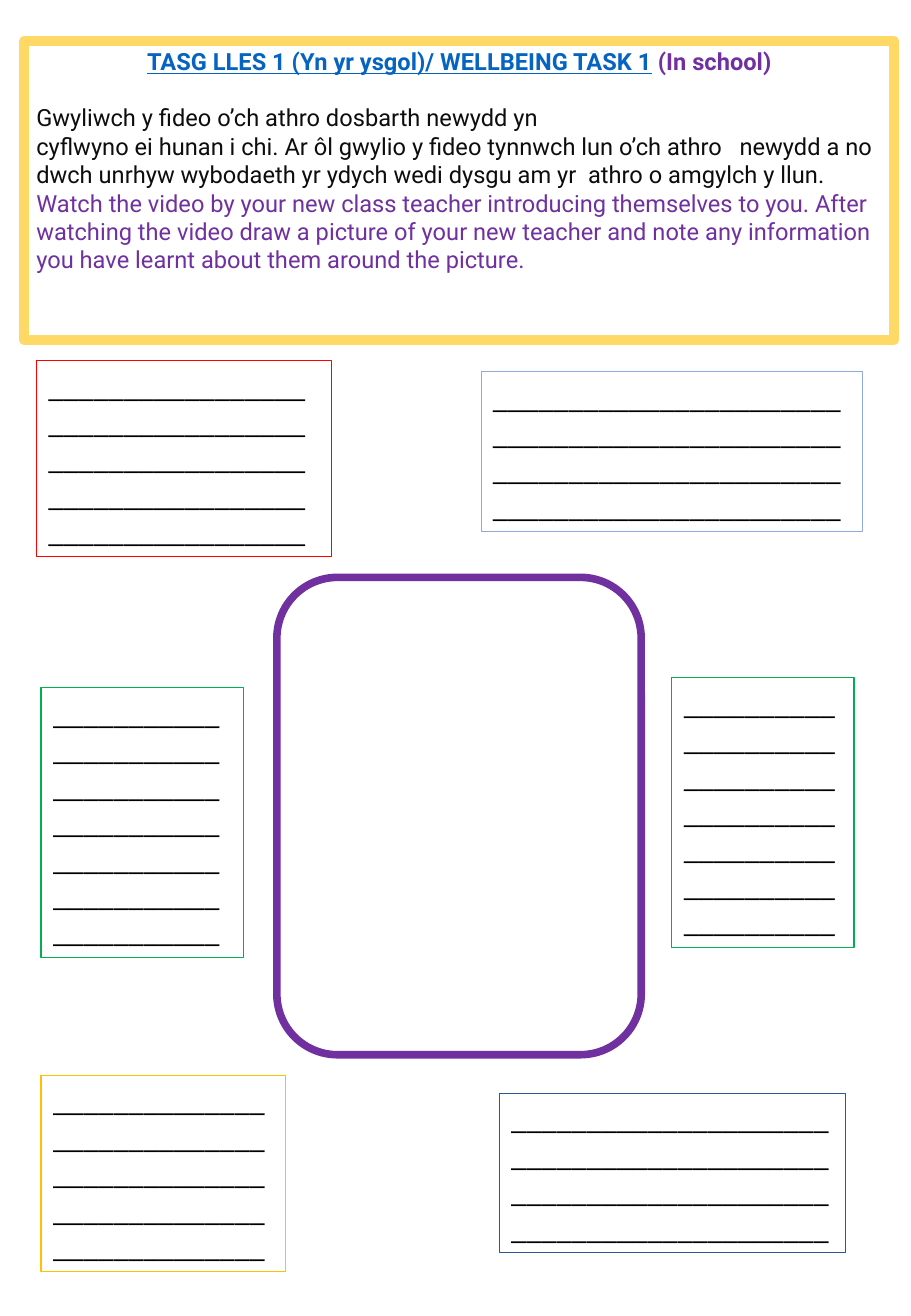
"""Build a bilingual wellbeing task sheet with a drawing frame and note boxes."""
from pptx import Presentation
from pptx.dml.color import RGBColor
from pptx.enum.shapes import MSO_SHAPE
from pptx.enum.text import MSO_ANCHOR, MSO_AUTO_SIZE, PP_ALIGN
from pptx.util import Cm, Pt

BLUE = RGBColor(0x05, 0x63, 0xC1)
PURPLE = RGBColor(0x70, 0x30, 0xA0)
INK = RGBColor(0x0D, 0x0D, 0x0D)
BLACK = RGBColor(0x00, 0x00, 0x00)
SAND = RGBColor(0xFF, 0xD9, 0x66)
SKY = RGBColor(0x8F, 0xAA, 0xDC)
AMBER = RGBColor(0xFF, 0xC0, 0x00)
NAVY = RGBColor(0x2F, 0x55, 0x97)
RED = RGBColor(0xFF, 0x00, 0x00)
GREEN = RGBColor(0x00, 0xB0, 0x50)

HEADING = "TASG LLES 1 (Yn yr ysgol)/ WELLBEING TASK 1"
PLACE = " (In school)"
INSTRUCTIONS = [
    ("Gwyliwch y fideo o’ch athro dosbarth newydd yn", INK),
    ("cyflwyno ei hunan i chi. Ar ôl gwylio y fideo tynnwch lun o’ch athro   newydd a "
     "nodwch unrhyw wybodaeth yr ydych wedi dysgu am yr  athro o amgylch y llun.", INK),
    ("Watch the video by your new class teacher introducing themselves to you. After "
     "watching the video draw a picture of your new teacher and note any information "
     "you have learnt about them around the picture.", PURPLE),
]
TASK_FRAME = (0.51, 0.86, 18.19, 6.25)
PORTRAIT_FRAME = (5.79, 12.07, 7.62, 9.98)
HEADING_HEIGHT = 1.3
NOTE_BOXES = [
    # left, top, width, rows, characters per row, line colour, line width
    (10.06, 7.77, 7.98, 4, 23, SKY, 0.25),
    (0.86, 22.48, 5.11, 5, 14, AMBER, 0.75),
    (10.44, 22.86, 7.24, 4, 21, NAVY, 0.75),
    (0.76, 7.54, 6.17, 5, 17, RED, 0.75),
    (0.86, 14.38, 4.24, 7, 11, GREEN, 0.75),
    (14.05, 14.17, 3.81, 7, 10, GREEN, 0.75),
]
ROW_HEIGHT = 0.77
BOX_PADDING = 0.25
NO_BREAK_SPACE = chr(160)


def add_text(paragraph, text, color, size=14, font="Roboto", bold=False, underline=False,
             align=PP_ALIGN.LEFT):
    """Append a formatted run to a paragraph."""
    paragraph.alignment = align
    run = paragraph.add_run()
    run.text = text
    run.font.name = font
    run.font.size = Pt(size)
    run.font.bold = bold
    run.font.underline = underline
    run.font.color.rgb = color


def add_frame(slide, kind, bounds, color, width):
    """Add an unfilled outline whose text starts at the top."""
    shape = slide.shapes.add_shape(kind, *map(Cm, bounds))
    shape.shadow.inherit = False
    shape.fill.background()
    shape.line.color.rgb = color
    shape.line.width = Pt(width)
    shape.text_frame.word_wrap = True
    shape.text_frame.vertical_anchor = MSO_ANCHOR.TOP
    return shape


def add_heading(slide):
    """Place the title at the top of the task frame."""
    title = slide.shapes.title
    left, top, width, _ = TASK_FRAME
    title.left, title.top = Cm(left), Cm(top)
    title.width, title.height = Cm(width), Cm(HEADING_HEIGHT)
    title.text_frame.auto_size = MSO_AUTO_SIZE.NONE
    title.text_frame.vertical_anchor = MSO_ANCHOR.TOP
    paragraph = title.text_frame.paragraphs[0]
    add_text(paragraph, HEADING, BLUE, bold=True, underline=True, align=PP_ALIGN.CENTER)
    add_text(paragraph, PLACE, PURPLE, bold=True, align=PP_ALIGN.CENTER)


def add_instructions(slide):
    """Add the task frame with its instructions below the heading."""
    frame = add_frame(slide, MSO_SHAPE.RECTANGLE, TASK_FRAME, SAND, 6)
    text_frame = frame.text_frame
    text_frame.margin_top = Cm(HEADING_HEIGHT)
    for index, (text, color) in enumerate(INSTRUCTIONS):
        paragraph = text_frame.add_paragraph() if index else text_frame.paragraphs[0]
        if color == INK:
            text = text.replace(" ", NO_BREAK_SPACE)
        add_text(paragraph, text, color)


def add_note_boxes(slide):
    """Add the ruled boxes for notes around the drawing."""
    for left, top, width, rows, characters, color, line_width in NOTE_BOXES:
        bounds = (left, top, width, rows * ROW_HEIGHT + BOX_PADDING)
        box = add_frame(slide, MSO_SHAPE.RECTANGLE, bounds, color, line_width)
        add_text(box.text_frame.paragraphs[0], "_" * (rows * characters), BLACK,
                 size=18, font="Calibri")


def main():
    """Create and save the presentation."""
    presentation = Presentation()
    presentation.slide_width, presentation.slide_height = Cm(19.05), Cm(27.51)
    slide = presentation.slides.add_slide(presentation.slide_layouts[5])
    add_heading(slide)
    add_instructions(slide)
    add_frame(slide, MSO_SHAPE.ROUNDED_RECTANGLE, PORTRAIT_FRAME, PURPLE, 4.5)
    add_note_boxes(slide)
    presentation.save("out.pptx")


if __name__ == "__main__":
    main()
